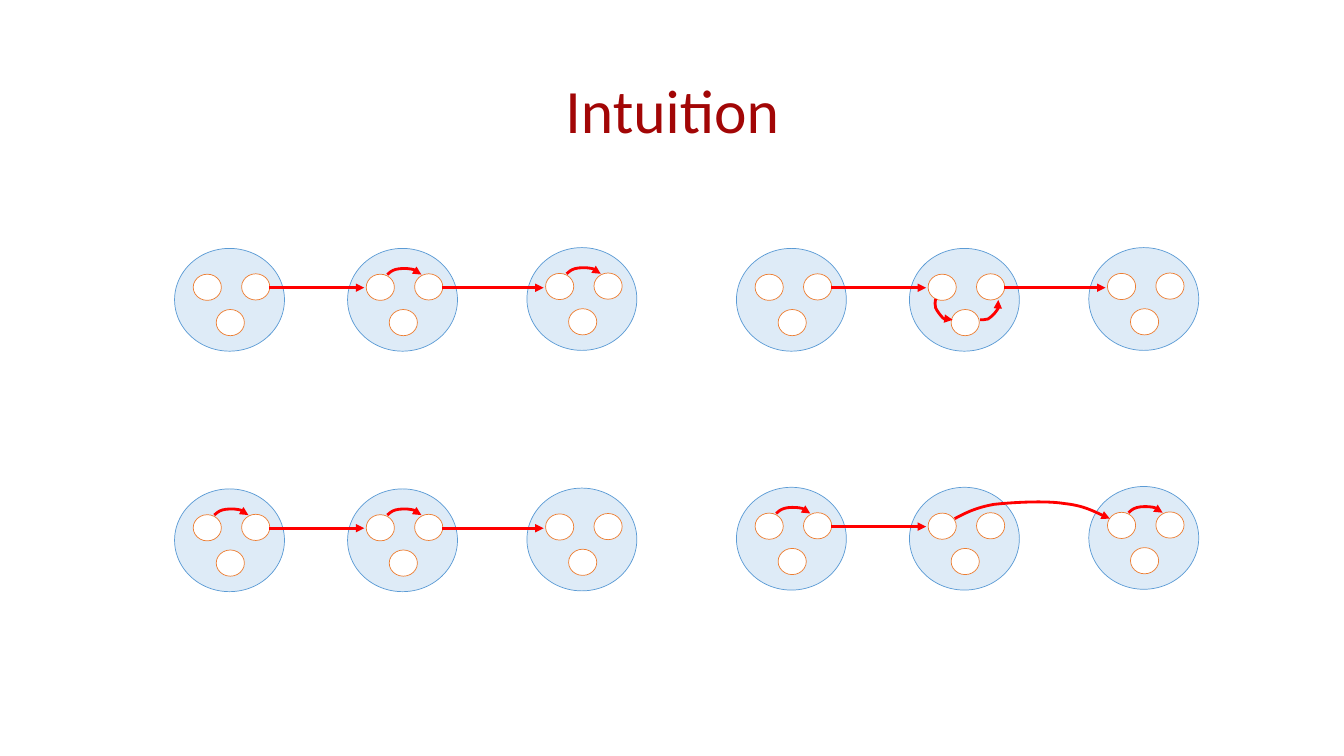
from dataclasses import dataclass

from lxml.etree import SubElement
from pptx import Presentation
from pptx.dml.color import RGBColor
from pptx.enum.shapes import MSO_CONNECTOR as Connector, MSO_SHAPE as Shape
from pptx.enum.text import MSO_ANCHOR as Anchor, PP_ALIGN as Align
from pptx.oxml.ns import qn
from pptx.util import Cm, Pt

TITLE = "Intuition"

# Each chain: its left and top in cm, then its arrows as (kind, cluster index).
CHAINS = [
    ((18.56, 12.28), [("hop", 0), ("over", 0), ("over", 2), ("leap", 1)]),
    ((18.56, 6.26), [("hop", 0), ("down", 1), ("up", 1), ("hop", 1)]),
    ((4.40, 12.32), [("hop", 0), ("hop", 1), ("over", 0), ("over", 1)]),
    ((4.40, 6.26), [("hop", 0), ("hop", 1), ("over", 2), ("over", 1)]),
]

# Offsets in cm: clusters from their chain, nodes and arrows from their cluster.
CLUSTERS = [(0, 0), (4.36, 0), (8.88, -0.02)]
CLUSTER_SIZE = (2.77, 2.59)
NODES = [(0.47, 0.65), (1.69, 0.64), (1.05, 1.54)]
NODE_SIZE = (0.71, 0.66)
HOP_START, HOP_END, HOP_HEIGHT = 2.39, 0.42, 0.99

# Start point, then three points for every Bézier segment.
CURVES = {
    "over": [(1.0, 0.66), (1.05, 0.61), (1.11, 0.56), (1.21, 0.53), (1.31, 0.5),
             (1.5, 0.5), (1.6, 0.52), (1.71, 0.54), (1.86, 0.66), (1.86, 0.66)],
    "down": [(0.66, 1.27), (0.64, 1.35), (0.64, 1.42), (0.66, 1.5), (0.69, 1.57),
             (0.79, 1.7), (0.84, 1.75), (0.91, 1.8), (1.09, 1.8), (1.09, 1.8)],
    "up": [(1.78, 1.8), (1.83, 1.8), (1.9, 1.8), (1.98, 1.78), (2.06, 1.73),
           (2.16, 1.63), (2.21, 1.55), (2.26, 1.47), (2.24, 1.3), (2.24, 1.3)],
    "leap": [(1.14, 0.79), (1.42, 0.64), (1.68, 0.51), (2.13, 0.43), (2.59, 0.38),
             (3.43, 0.33), (3.91, 0.41), (4.39, 0.46), (5.05, 0.79), (5.05, 0.79)],
}


@dataclass(frozen=True)
class Theme:
    font: str = "Calibri"
    title_size: Pt = Pt(44)
    title: RGBColor = RGBColor(0xA2, 0x06, 0x06)
    cluster_fill: RGBColor = RGBColor(0xDE, 0xEB, 0xF7)
    cluster_line: RGBColor = RGBColor(0x5B, 0x9B, 0xD5)
    node_fill: RGBColor = RGBColor(0xFF, 0xFF, 0xFF)
    node_line: RGBColor = RGBColor(0xED, 0x7D, 0x31)
    arrow: RGBColor = RGBColor(0xFF, 0x00, 0x00)
    outline_width: Pt = Pt(0.5)
    arrow_width: Pt = Pt(2)


THEME = Theme()


def shift(origin, offset):
    return origin[0] + offset[0], origin[1] + offset[1]


def add_title(slide):
    title = slide.shapes.title
    title.left, title.top, title.width, title.height = Cm(2.34), Cm(1.02), Cm(29.21), Cm(3.68)
    title.text_frame.text = TITLE
    title.text_frame.vertical_anchor = Anchor.MIDDLE
    paragraph = title.text_frame.paragraphs[0]
    paragraph.alignment = Align.CENTER
    paragraph.line_spacing = 0.9
    paragraph.font.name = THEME.font
    paragraph.font.size = THEME.title_size
    paragraph.font.color.rgb = THEME.title


def add_ellipse(group, position, size, fill, line):
    ellipse = group.shapes.add_shape(Shape.OVAL, *map(Cm, position + size))
    ellipse.shadow.inherit = False
    ellipse.fill.solid()
    ellipse.fill.fore_color.rgb = fill
    ellipse.line.color.rgb = line
    ellipse.line.width = THEME.outline_width


def style_arrow(shape):
    shape.line.color.rgb = THEME.arrow
    shape.line.width = THEME.arrow_width
    properties = shape.element.spPr
    SubElement(properties.find(qn("a:ln")), qn("a:tailEnd"), type="triangle")
    SubElement(properties, qn("a:effectLst"))


def add_hop(group, start, end):
    style_arrow(group.shapes.add_connector(Connector.STRAIGHT, *map(Cm, start + end)))


def add_curve(group, points):
    """Draw the points as a freeform and turn each three line steps into a Bézier segment."""
    start, *controls = [(Cm(x), Cm(y)) for x, y in points]
    builder = group.shapes.build_freeform(*start)
    builder.add_line_segments(controls, close=False)
    curve = builder.convert_to_shape()
    steps = list(curve.element.iter(qn("a:lnTo")))
    outline = steps[0].getparent()
    for first in range(0, len(steps), 3):
        segment = SubElement(outline, qn("a:cubicBezTo"))
        for step in steps[first:first + 3]:
            segment.append(step[0])
            outline.remove(step)
    curve.fill.background()
    style_arrow(curve)


def add_chain(slide, origin, arrows):
    group = slide.shapes.add_group_shape()
    clusters = [shift(origin, offset) for offset in CLUSTERS]
    for cluster in clusters:
        add_ellipse(group, cluster, CLUSTER_SIZE, THEME.cluster_fill, THEME.cluster_line)
        for node in NODES:
            add_ellipse(group, shift(cluster, node), NODE_SIZE, THEME.node_fill, THEME.node_line)
    for kind, index in arrows:
        if kind == "hop":
            height = origin[1] + HOP_HEIGHT
            add_hop(group, (clusters[index][0] + HOP_START, height),
                    (clusters[index + 1][0] + HOP_END, height))
        else:
            add_curve(group, [shift(clusters[index], point) for point in CURVES[kind]])


def main():
    presentation = Presentation()
    presentation.slide_width, presentation.slide_height = Cm(33.87), Cm(19.05)
    slide = presentation.slides.add_slide(presentation.slide_layouts[5])
    for origin, arrows in CHAINS:
        add_chain(slide, origin, arrows)
    add_title(slide)
    presentation.save("out.pptx")


if __name__ == "__main__":
    main()
